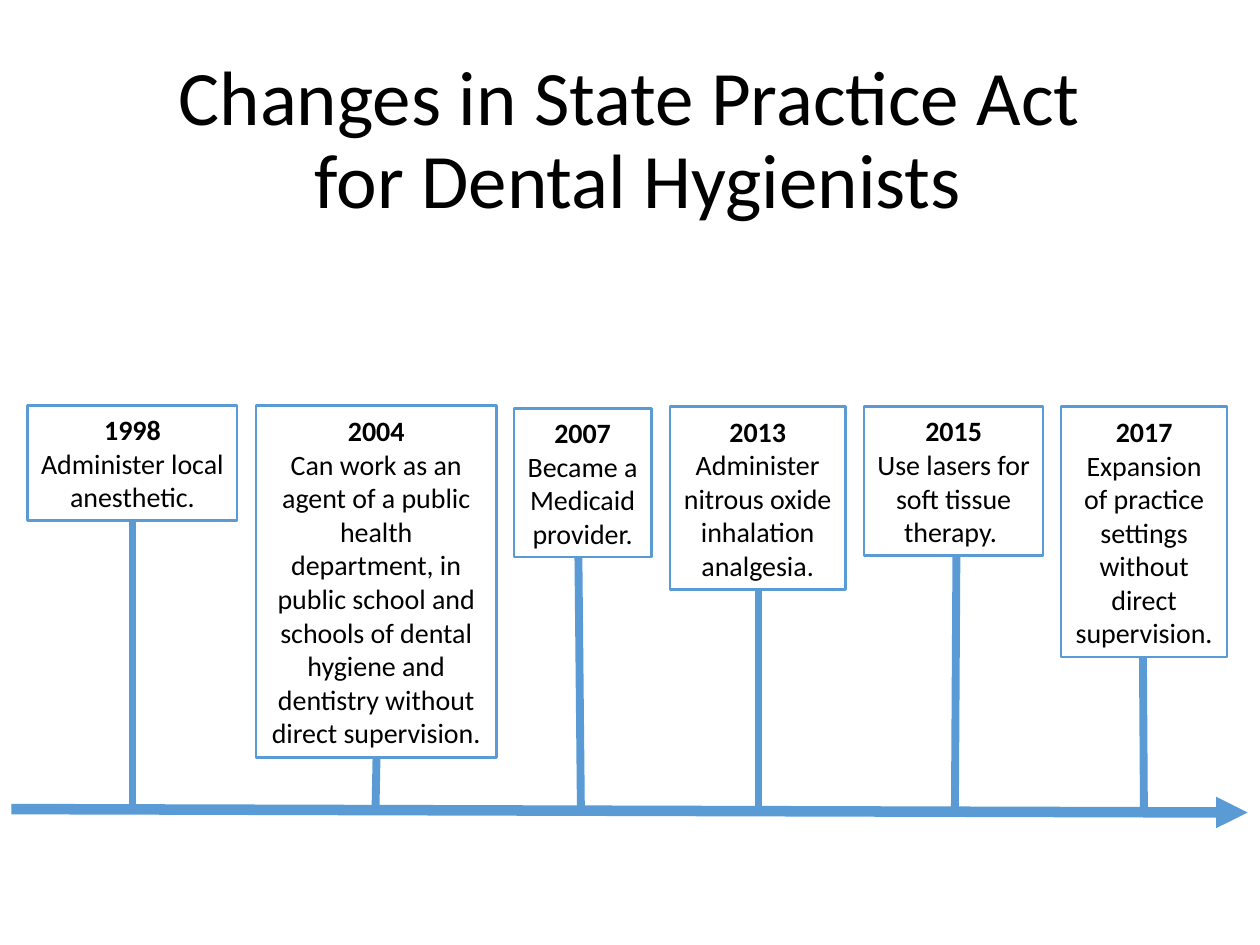
"""Build a timeline slide of changes in the state practice act for dental hygienists."""
import pptx
import pptx.dml.color
import pptx.enum.shapes
import pptx.enum.text
import pptx.oxml
import pptx.oxml.ns
import pptx.util

Cm, Pt = pptx.util.Cm, pptx.util.Pt
BLUE = pptx.dml.color.RGBColor(0x5B, 0x9B, 0xD5)
BLACK = pptx.dml.color.RGBColor(0, 0, 0)
MID = pptx.enum.text.PP_ALIGN.CENTER
ANCHOR = pptx.enum.text.MSO_ANCHOR.MIDDLE
AUTO = pptx.enum.text.MSO_AUTO_SIZE
NS = pptx.oxml.ns.nsdecls("a")


def write(frame, lines, size, bolds, space, fit):
    """Fill a text frame with centred lines."""
    form = {"word_wrap": True, "auto_size": fit, "vertical_anchor": ANCHOR}
    for key, val in form.items():
        setattr(frame, key, val)
    frame.text = "\n".join(lines)
    for para, bold in zip(frame.paragraphs, bolds):
        para.alignment = MID
        para.line_spacing = space
        font = para.runs[0].font
        for key, val in {"name": "Calibri", "size": Pt(size), "bold": bold}.items():
            setattr(font, key, val)
        font.color.rgb = BLACK


def rule(start, end, width):
    """Draw a plain blue line between two points."""
    line = slide.shapes.add_connector(
        pptx.enum.shapes.MSO_CONNECTOR.STRAIGHT, *map(Cm, start + end))
    line.line.color.rgb = BLUE
    line.line.width = Pt(width)
    line._element.spPr.append(pptx.oxml.parse_xml(f"<a:effectLst {NS}/>"))
    return line


deck = pptx.Presentation()
deck.slide_width, deck.slide_height = Cm(25.4), Cm(19.05)
slide = deck.slides.add_slide(deck.slide_layouts[5])

title = slide.shapes.title
place = {"left": 1.75, "top": 1.02, "width": 21.89, "height": 3.68}
for key, val in place.items():
    setattr(title, key, Cm(val))
write(title.text_frame, ["Changes in State Practice Act", " for Dental Hygienists"],
      44, [False, False], 0.9, AUTO.NONE)

axis = rule((0.23, 16.31), (25.15, 16.38), 6)
axis.line._get_or_add_ln().append(
    pptx.oxml.parse_xml(f'<a:tailEnd {NS} type="triangle"/>'))

events = [
    ("1998", "Administer local anesthetic.",
     (0.56, 8.18, 4.22, 2.31), 2.67, (2.67, 16.33)),
    ("2004", "Can work as an agent of a public health department, in public school "
     "and schools of dental hygiene and dentistry without direct supervision.",
     (5.16, 8.18, 4.85, 7.09), 7.59, (7.57, 16.31)),
    ("2007", "Became a Medicaid provider.",
     (10.36, 8.23, 2.77, 3), 11.66, (11.71, 16.31)),
    ("2013", "Administer nitrous oxide inhalation analgesia.",
     (13.51, 8.2, 3.53, 3.68), 15.29, (15.29, 16.38)),
    ("2015", "Use lasers for soft tissue therapy. ",
     (17.42, 8.2, 3.61, 3), 19.28, (19.25, 16.28)),
    ("2017", "Expansion of practice settings without direct supervision.",
     (21.39, 8.2, 3.35, 5.05), 23.04, (23.06, 16.31)),
]
for year, change, area, stem, foot in events:
    box = slide.shapes.add_shape(
        pptx.enum.shapes.MSO_SHAPE.RECTANGLE, *map(Cm, area))
    box.shadow.inherit = False
    box.fill.background()
    box.line.color.rgb = BLUE
    box.line.width = Pt(1.5)
    write(box.text_frame, [year, change], 16, [True, False], 1.0,
          AUTO.SHAPE_TO_FIT_TEXT)
    rule((stem, area[1] + area[3]), foot, 4.5)

deck.save("out.pptx")
